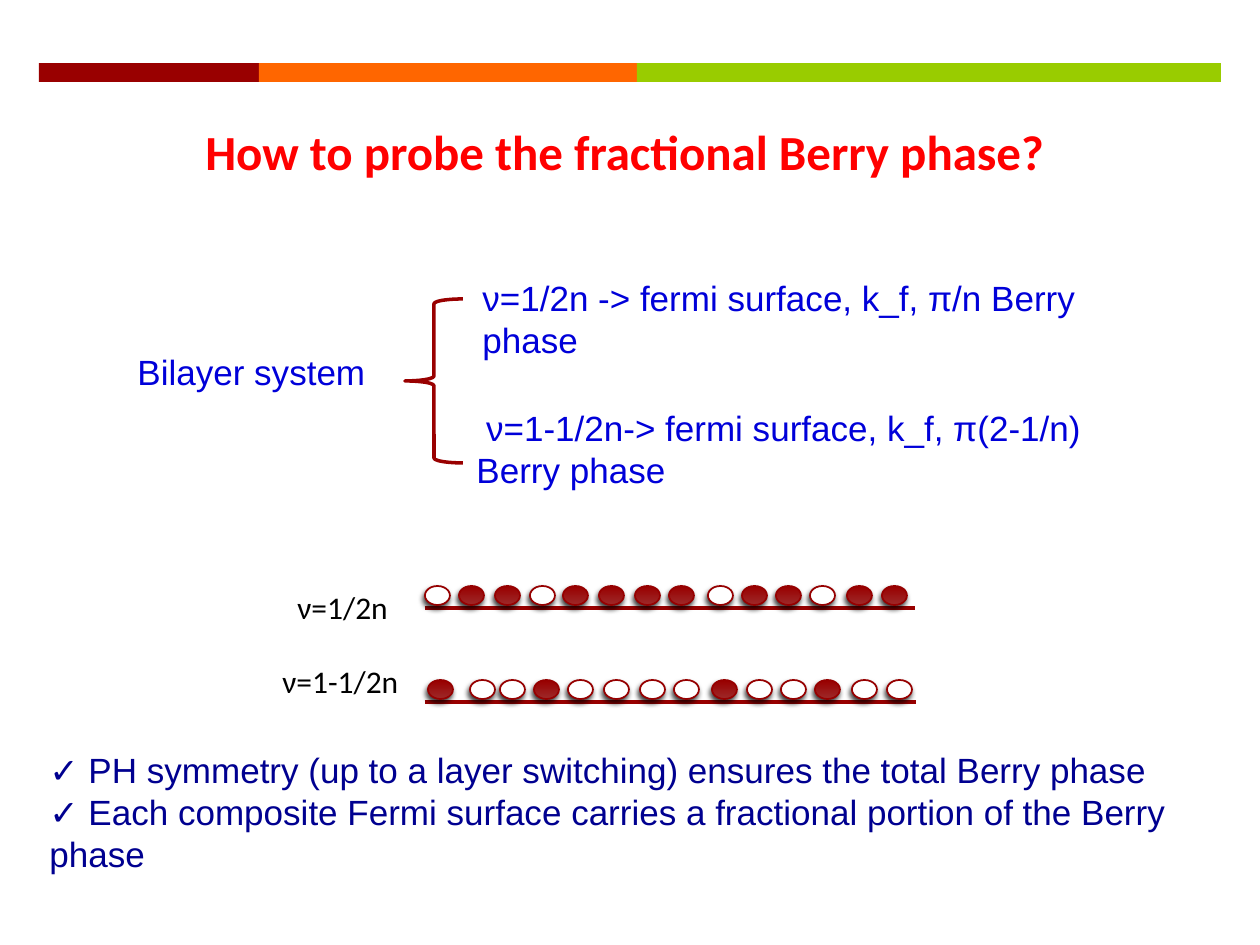
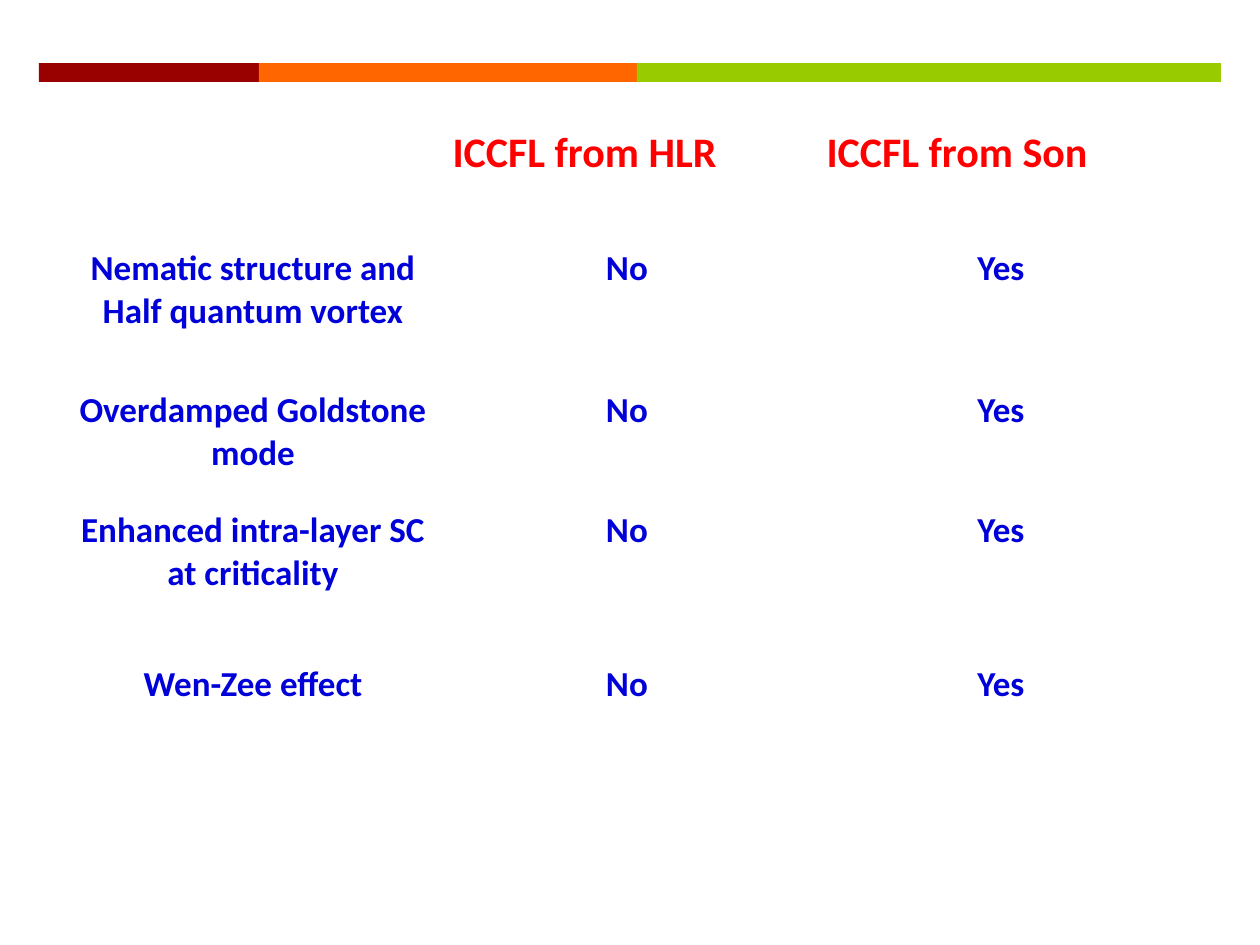
import lxml.etree
import pptx
import pptx.dml.color
import pptx.enum.shapes
import pptx.enum.text
import pptx.oxml.ns
import pptx.util

PX = 914400 / 126
DARK_RED, ORANGE, GREEN = "990000", "FF6600", "99CC00"
TITLE_RED, BLUE, NAVY = "FF0000", "0000D9", "000090"
SHAPES = pptx.enum.shapes.MSO_SHAPE
CENTER = pptx.enum.text.PP_ALIGN.CENTER
color = pptx.dml.color.RGBColor.from_string
qn = pptx.oxml.ns.qn


def px(*lengths):
    """Turn lengths in px into a list of EMU."""
    return [pptx.util.Emu(round(length * PX)) for length in lengths]


def write(frame, text, size, hex_color, font="Calibri", bold=False, align=None):
    frame.text = text
    for paragraph in frame.paragraphs:
        paragraph.alignment = align
        paragraph.font.name = font
        paragraph.font.size = pptx.util.Pt(size)
        paragraph.font.bold = bold
        paragraph.font.color.rgb = color(hex_color)


presentation = pptx.Presentation()
presentation.slide_width, presentation.slide_height = px(1260, 945)
probe_slide = presentation.slides.add_slide(presentation.slide_layouts.get_by_name("Title Only"))
table_slide = presentation.slides.add_slide(presentation.slide_layouts.get_by_name("Blank"))

# The three-coloured band belongs to the slide master
band_left = 39
for number, (width, fill) in enumerate([(220, DARK_RED), (378, ORANGE), (584, GREEN)]):
    band = probe_slide.shapes.add_shape(SHAPES.RECTANGLE, *px(band_left, 63, width, 19))
    band.shadow.inherit = False
    band.fill.solid()
    band.fill.fore_color.rgb = color(fill)
    band.line.fill.background()
    band.element.nvSpPr.cNvPr.id = 20 + number
    presentation.slide_master.shapes.element.append(band.element)
    band_left += width

# Slide 1: the two filling factors
title = probe_slide.shapes.title
title.left, title.top, title.width, title.height = px(110, 115, 1029, 190)
title.text_frame.auto_size = pptx.enum.text.MSO_AUTO_SIZE.NONE
title.text_frame.vertical_anchor = pptx.enum.text.MSO_ANCHOR.TOP
write(title.text_frame, "How to probe the fractional Berry phase?", 28, TITLE_RED,
      bold=True, align=CENTER)

brace = probe_slide.shapes.add_shape(SHAPES.LEFT_BRACE, *px(405, 299, 58, 164))
brace.shadow.inherit = False
brace.fill.background()
brace.line.color.rgb = color(DARK_RED)
brace.line.width = pptx.util.Pt(2)

checks = ("✓ PH symmetry (up to a layer switching) ensures the total Berry phase\n"
          "✓ Each composite Fermi surface carries a fractional portion of the Berry phase")
texts = [
    ((470, 270, 679, 97), "ν=1/2n -> fermi surface, k_f, π/n Berry phase", 20, BLUE, "Arial", True),
    ((464, 400, 700, 140), " ν=1-1/2n-> fermi surface, k_f, π(2-1/n) Berry phase", 20, BLUE, "Arial", True),
    ((125, 344, 256, 55), "Bilayer system", 20, BLUE, "Arial", False),
    ((37, 742, 1184, 140), checks, 20, NAVY, "Arial", True),
    ((285, 582, 121, 50), "ν=1/2n", 18, "000000", "Calibri", False),
    ((270, 656, 149, 50), "ν=1-1/2n", 18, "000000", "Calibri", False),
]
for box, text, size, hex_color, font, wraps in texts:
    frame = probe_slide.shapes.add_textbox(*px(*box)).text_frame
    frame.word_wrap = wraps
    write(frame, text, size, hex_color, font)

# Layers of particles (#) and holes (o)
layers = [
    (608, 586, 915, "o##o####o##o##",
     [425, 459, 495, 530, 563, 599, 635, 669, 708, 742, 776, 810, 847, 882]),
    (702, 680, 916, "#oo#oooo#oo#oo",
     [428, 470, 500, 534, 568, 604, 640, 674, 712, 747, 781, 815, 852, 887]),
]
for line_y, site_top, line_end, sites, lefts in layers:
    line = probe_slide.shapes.add_connector(
        pptx.enum.shapes.MSO_CONNECTOR.STRAIGHT, *px(425, line_y, line_end, line_y))
    line.line.color.rgb = color(DARK_RED)
    line.line.width = pptx.util.Pt(2)
    lxml.etree.SubElement(line.element.spPr, qn("a:effectLst"))
    for site, left in zip(sites, lefts):
        dot = probe_slide.shapes.add_shape(SHAPES.OVAL, *px(left, site_top, 25, 19))
        if site == "#":
            dot.fill.gradient()
            dot.fill.gradient_angle = 90
            for stop, shade in zip(dot.fill.gradient_stops, ["9D2828", DARK_RED]):
                stop.color.rgb = color(shade)
        else:
            dot.fill.solid()
            dot.fill.fore_color.rgb = color("FFFFFF")
        dot.line.color.rgb = color("960000")
        dot.line.width = pptx.util.Pt(1)
        dot.shadow.inherit = False
        effects = dot.element.spPr.find(qn("a:effectLst"))
        shadow = lxml.etree.SubElement(effects, qn("a:outerShdw"), blurRad="38100",
                                       dist="25400", dir="6600000", rotWithShape="0")
        black = lxml.etree.SubElement(shadow, qn("a:srgbClr"), val="000000")
        lxml.etree.SubElement(black, qn("a:alpha"), val="75000")

# Slide 2: comparison table
rows = [
    (120, ["", "ICCFL from HLR", "ICCFL from Son"]),
    (142, ["Nematic structure and Half quantum vortex", "No", "Yes"]),
    (120, ["Overdamped Goldstone mode", "No", "Yes"]),
    (98, ["Enhanced intra-layer SC\nat criticality", "No", "Yes"]),
    (56, ["", "", ""]),
    (120, ["Wen-Zee effect", "No", "Yes"]),
]
table_height = sum(height for height, _ in rows)
table = table_slide.shapes.add_table(len(rows), 3, *px(66, 121, 1122, table_height)).table
table.first_row = table.horz_banding = False
for row_number, (height, values) in enumerate(rows):
    table.rows[row_number].height = px(height)[0]
    for cell, value in zip(table.rows[row_number].cells, values):
        cell.fill.background()
        if row_number == 0:
            write(cell.text_frame, value, 24, TITLE_RED, bold=True)
        else:
            write(cell.text_frame, value, 20, BLUE, bold=True, align=CENTER)

presentation.save("out.pptx")
